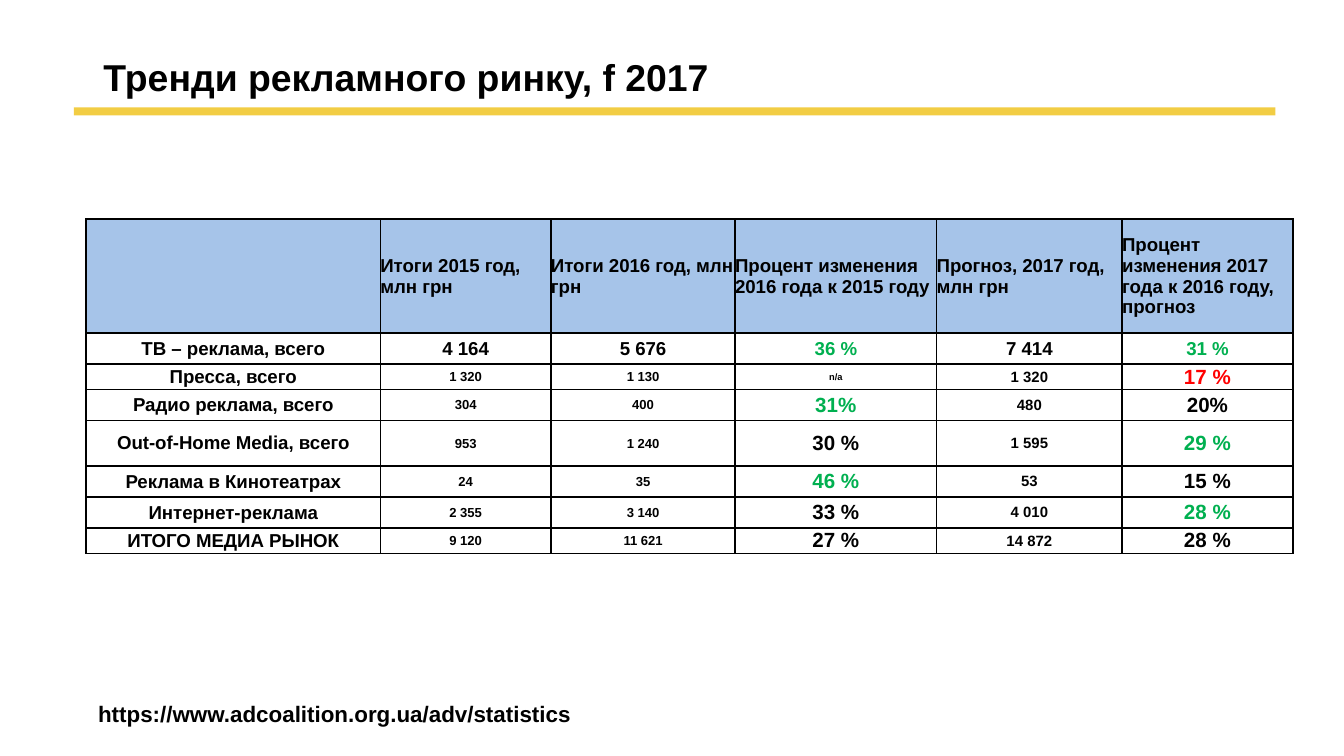
"""Build the slide on advertising market trends."""
from lxml.etree import SubElement as Sub, Element as Elem
from pptx import Presentation
from pptx.dml.color import RGBColor as Rgb
from pptx.enum.shapes import MSO_SHAPE as Kind
from pptx.enum.text import MSO_ANCHOR as Anchor, PP_ALIGN as Align
from pptx.oxml.ns import qn
from pptx.util import Inches, Pt

BLACK, GREEN, RED = "000000", "00B050", "FF0000"
COLS = [2.19, 1.27, 1.37, 1.5, 1.38, 1.27]
ROWS = [0.85, 0.23, 0.19, 0.23, 0.34, 0.23, 0.23, 0.19]
SIZES = [10, 7, 7, 11, 8, 11]
HEAD = [
    "", "Итоги 2015 год, млн грн", "Итоги 2016 год, млн грн",
    "Процент изменения 2016 года к 2015 году", "Прогноз, 2017 год, млн грн",
    "Процент изменения 2017 года к 2016 году, прогноз",
]
DATA = [
    ["ТВ – реклама, всего", "4 164", "5 676", "36 %", "7 414", "31 %"],
    ["Пресса, всего", "1 320", "1 130", "n/a", "1 320", "17 %"],
    ["Радио реклама, всего", "304", "400", "31%", "480", "20%"],
    ["Out-of-Home Media, всего", "953", "1 240", "30 %", "1 595", "29 %"],
    ["Реклама в Кинотеатрах", "24", "35", "46 %", "53", "15 %"],
    ["Интернет-реклама", "2 355", "3 140", "33 %", "4 010", "28 %"],
    ["ИТОГО МЕДИА РЫНОК", "9 120", "11 621", "27 %", "14 872", "28 %"],
]
TINTS = {(1, 3): GREEN, (1, 5): GREEN, (2, 5): RED, (3, 3): GREEN,
         (4, 5): GREEN, (5, 3): GREEN, (6, 5): GREEN}


def paint(code):
    return Rgb.from_string(code)


def write(frame, text, size=10, color=BLACK, align=Align.LEFT):
    para = frame.paragraphs[0]
    para.alignment = align
    run = para.add_run()
    run.text = text
    font = run.font
    font.name, font.size, font.bold = "Arial", Pt(size), True
    font.color.rgb = paint(color)


def pad(frame, left=0.1, top=0.05, right=0.1, bottom=0.05):
    frame.margin_left, frame.margin_top = Inches(left), Inches(top)
    frame.margin_right, frame.margin_bottom = Inches(right), Inches(bottom)


class Deck:
    """Hold the style and the current slide."""

    def __init__(self):
        self.show = Presentation()
        self.show.slide_width = Inches(10)
        self.show.slide_height = Inches(10) * 9 // 16
        self.slide = self.show.slides.add_slide(self.show.slide_layouts[5])
        self.shapes = self.slide.shapes

    def title(self, text, box):
        shape = self.shapes.title
        shape.left, shape.top, shape.width, shape.height = map(Inches, box)
        frame = shape.text_frame
        frame.vertical_anchor = Anchor.TOP
        pad(frame)
        write(frame, text, size=20)

    def bar(self, box, color):
        shape = self.shapes.add_shape(Kind.RECTANGLE, *map(Inches, box))
        shape.shadow.inherit = False
        shape.fill.solid()
        shape.fill.fore_color.rgb = paint(color)
        shape.line.fill.background()

    def note(self, text, box):
        frame = self.shapes.add_textbox(*map(Inches, box)).text_frame
        frame.word_wrap = True
        frame.vertical_anchor = Anchor.BOTTOM
        pad(frame, left=0.22, bottom=0.11)
        write(frame, text, size=12)

    def cell(self, cell, color):
        cell.fill.solid()
        cell.fill.fore_color.rgb = paint(color)
        cell.vertical_anchor = Anchor.MIDDLE
        pad(cell, 0, 0, 0, 0)
        props = cell._tc.get_or_add_tcPr()
        tone = props.find(qn("a:solidFill")).find(qn("a:srgbClr"))
        Sub(tone, qn("a:alpha"), val="52000")
        for spot, side in enumerate(["a:lnL", "a:lnR", "a:lnT", "a:lnB"]):
            line = Elem(qn(side), w=str(Pt(1)))
            Sub(Sub(line, qn("a:solidFill")), qn("a:srgbClr"), val=BLACK)
            props.insert(spot, line)

    def table(self, box):
        table = self.shapes.add_table(
            len(ROWS), len(COLS), *map(Inches, box)).table
        for col, width in zip(table.columns, COLS):
            col.width = Inches(width)
        for row, height in zip(table.rows, ROWS):
            row.height = Inches(height)
        for r, texts in enumerate([HEAD] + DATA):
            for c, text in enumerate(texts):
                cell = table.cell(r, c)
                self.cell(cell, "FFFFFF" if r else "558ED5")
                size = 10 if r < 2 else 5 if text == "n/a" else SIZES[c]
                write(cell.text_frame, text, size=size,
                      color=TINTS.get((r, c), BLACK),
                      align=Align.CENTER if r else Align.LEFT)


def main():
    deck = Deck()
    deck.bar((0.55, 0.8, 8.94, 0.06), "F2CD44")
    deck.table((0.64, 1.63, 8.98, 2.47))
    deck.title("Тренди рекламного ринку, f 2017", (0.67, 0.35, 9, 0.94))
    deck.note("https://www.adcoalition.org.ua/adv/statistics",
              (0.51, 4.88, 6.77, 0.64))
    deck.show.save("out.pptx")


if __name__ == "__main__":
    main()
